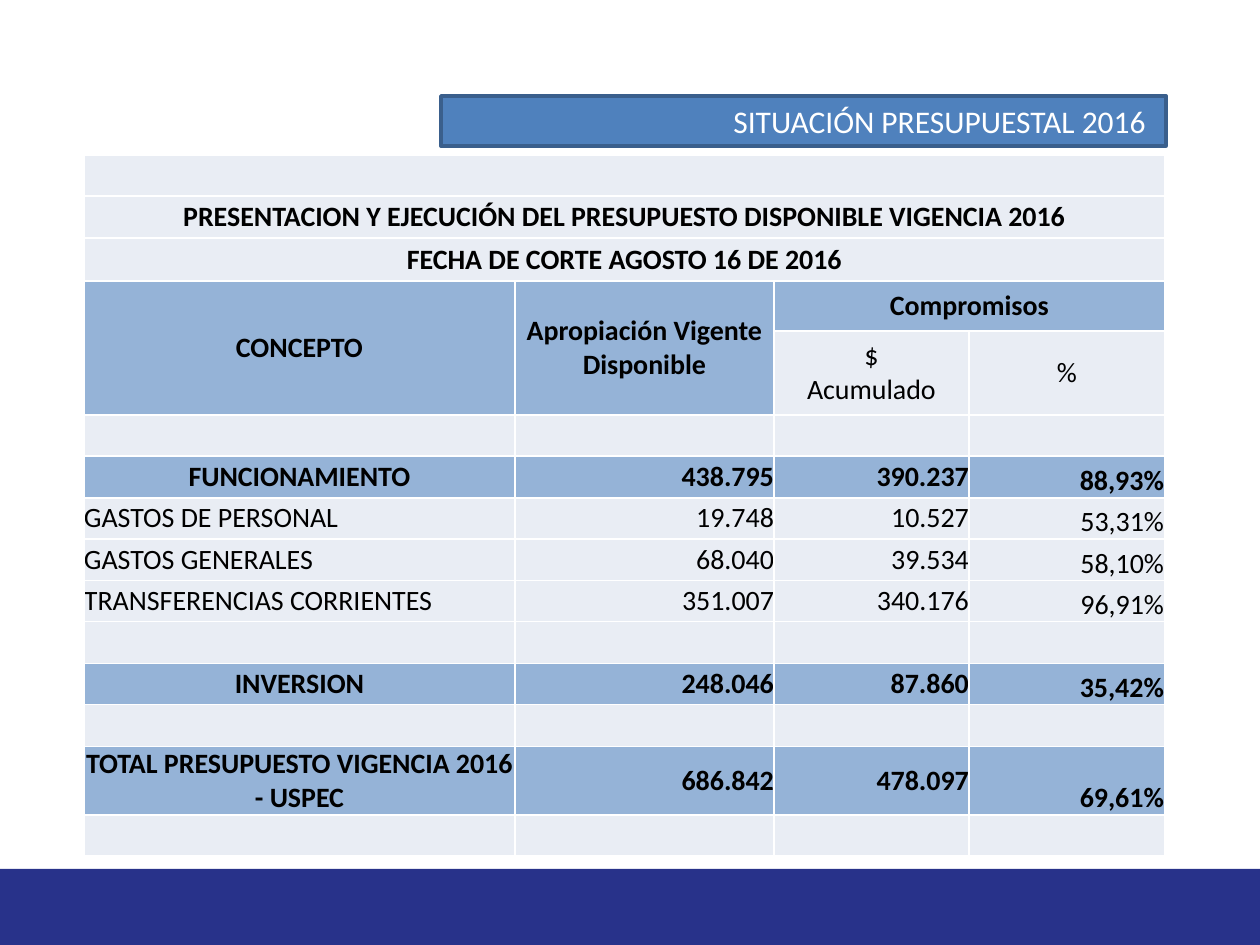
from dataclasses import dataclass

from lxml import etree
from pptx import Presentation
from pptx import util as u
from pptx.dml.color import RGBColor
from pptx.enum import shapes, text
from pptx.oxml.ns import qn


@dataclass(frozen=True)
class Theme:
    font: str = "Calibri"
    title_size: int = 18
    table_size: int = 16
    white: str = "FFFFFF"
    black: str = "000000"
    banner: str = "4F81BD"
    banner_line: str = "3A5F8C"
    footer: str = "28328A"
    plain: str = "E9EDF4"
    strong: str = "95B3D7"


THEME = Theme()
PX_PER_INCH = 126
LEFT, CENTER, RIGHT = text.PP_ALIGN.LEFT, text.PP_ALIGN.CENTER, text.PP_ALIGN.RIGHT

COLUMN_WIDTHS = [431, 259, 195, 196]
ROW_HEIGHTS = [41, 42, 43, 50, 84] + [41, 42] * 4 + [67, 41]

HEADINGS = {
    1: "PRESENTACION Y EJECUCIÓN DEL PRESUPUESTO DISPONIBLE VIGENCIA 2016",
    2: "FECHA DE CORTE AGOSTO 16 DE 2016",
}
COLUMN_HEADERS = [
    (3, 0, "CONCEPTO", True),
    (3, 1, "Apropiación Vigente Disponible", True),
    (3, 2, "Compromisos", True),
    (4, 2, "$\nAcumulado", False),
    (4, 3, "%", False),
]
BUDGET_ROWS = {
    6: (True, "FUNCIONAMIENTO", "438.795", "390.237", "88,93%"),
    7: (False, "GASTOS DE PERSONAL", "19.748", "10.527", "53,31%"),
    8: (False, "GASTOS GENERALES", "68.040", "39.534", "58,10%"),
    9: (False, "TRANSFERENCIAS CORRIENTES", "351.007", "340.176", "96,91%"),
    11: (True, "INVERSION", "248.046", "87.860", "35,42%"),
    13: (True, "TOTAL PRESUPUESTO VIGENCIA 2016 - USPEC", "686.842", "478.097", "69,61%"),
}


def px(value):
    return u.Emu(round(value * 914400 / PX_PER_INCH))


def color(value):
    return RGBColor.from_string(value)


def paint(fill, value):
    fill.solid()
    fill.fore_color.rgb = color(value)


def style_font(font, size, value, bold=False):
    font.name = THEME.font
    font.size = u.Pt(size)
    font.color.rgb = color(value)
    font.bold = bold


def add_footer(slide):
    bar = slide.shapes.add_shape(shapes.MSO_SHAPE.RECTANGLE, 0, px(869), px(1260), px(76))
    bar.shadow.inherit = False
    paint(bar.fill, THEME.footer)
    bar.line.fill.background()


def set_title(slide, wording):
    title = slide.shapes.title
    title.left, title.top, title.width, title.height = px(441), px(96), px(725), px(50)
    paint(title.fill, THEME.banner)
    title.line.color.rgb = color(THEME.banner_line)
    title.line.width = u.Pt(2)
    frame = title.text_frame
    frame.auto_size = text.MSO_AUTO_SIZE.NONE
    frame.vertical_anchor = text.MSO_ANCHOR.MIDDLE
    frame.margin_right = px(20)
    paragraph = frame.paragraphs[0]
    paragraph.text = wording
    paragraph.alignment = RIGHT
    style_font(paragraph.font, THEME.title_size, THEME.white)


def format_cell(cell, fill):
    properties = cell._tc.get_or_add_tcPr()
    for side in ("a:lnL", "a:lnR", "a:lnT", "a:lnB"):
        line = etree.SubElement(properties, qn(side), w=str(u.Pt(1)))
        solid = etree.SubElement(line, qn("a:solidFill"))
        etree.SubElement(solid, qn("a:srgbClr"), val=THEME.white)
    paint(cell.fill, fill)
    cell.margin_left = cell.margin_right = cell.margin_top = cell.margin_bottom = 0
    cell.vertical_anchor = text.MSO_ANCHOR.MIDDLE
    style_font(cell.text_frame.paragraphs[0].font, THEME.table_size, THEME.black)


def write_cell(cell, wording, alignment=CENTER, bold=False):
    paragraph = cell.text_frame.paragraphs[0]
    paragraph.text = wording
    paragraph.alignment = alignment
    style_font(paragraph.font, THEME.table_size, THEME.black, bold)


def write_budget_row(table, row, strong, values):
    for column, value in enumerate(values):
        alignment = RIGHT if column else CENTER if strong else LEFT
        write_cell(table.cell(row, column), value, alignment, strong)
    percentage = table.cell(row, 3)
    percentage.vertical_anchor = text.MSO_ANCHOR.BOTTOM
    percentage.margin_left = percentage.margin_right = percentage.margin_top = px(1)


def add_budget_table(slide):
    table = slide.shapes.add_table(
        len(ROW_HEIGHTS), len(COLUMN_WIDTHS),
        px(84), px(155), px(sum(COLUMN_WIDTHS)), px(sum(ROW_HEIGHTS)),
    ).table
    table.first_row = table.horz_banding = False
    for column, width in zip(table.columns, COLUMN_WIDTHS):
        column.width = px(width)
    for row, height in zip(table.rows, ROW_HEIGHTS):
        row.height = px(height)

    strong_rows = {row for row, values in BUDGET_ROWS.items() if values[0]}
    for row in range(len(ROW_HEIGHTS)):
        for column in range(len(COLUMN_WIDTHS)):
            strong = row in strong_rows or row == 3 or (row == 4 and column < 2)
            format_cell(table.cell(row, column), THEME.strong if strong else THEME.plain)

    for row in range(3):
        table.cell(row, 0).merge(table.cell(row, 3))
    for column in range(2):
        table.cell(3, column).merge(table.cell(4, column))
    table.cell(3, 2).merge(table.cell(3, 3))

    for row, wording in HEADINGS.items():
        write_cell(table.cell(row, 0), wording, bold=True)
    for row, column, wording, bold in COLUMN_HEADERS:
        write_cell(table.cell(row, column), wording, bold=bold)
    for row, (strong, *values) in BUDGET_ROWS.items():
        write_budget_row(table, row, strong, values)


def main():
    presentation = Presentation()
    presentation.slide_width, presentation.slide_height = px(1260), px(945)
    slide = presentation.slides.add_slide(presentation.slide_layouts[5])
    add_footer(slide)
    set_title(slide, "SITUACIÓN PRESUPUESTAL 2016")
    add_budget_table(slide)
    presentation.save("out.pptx")


if __name__ == "__main__":
    main()
